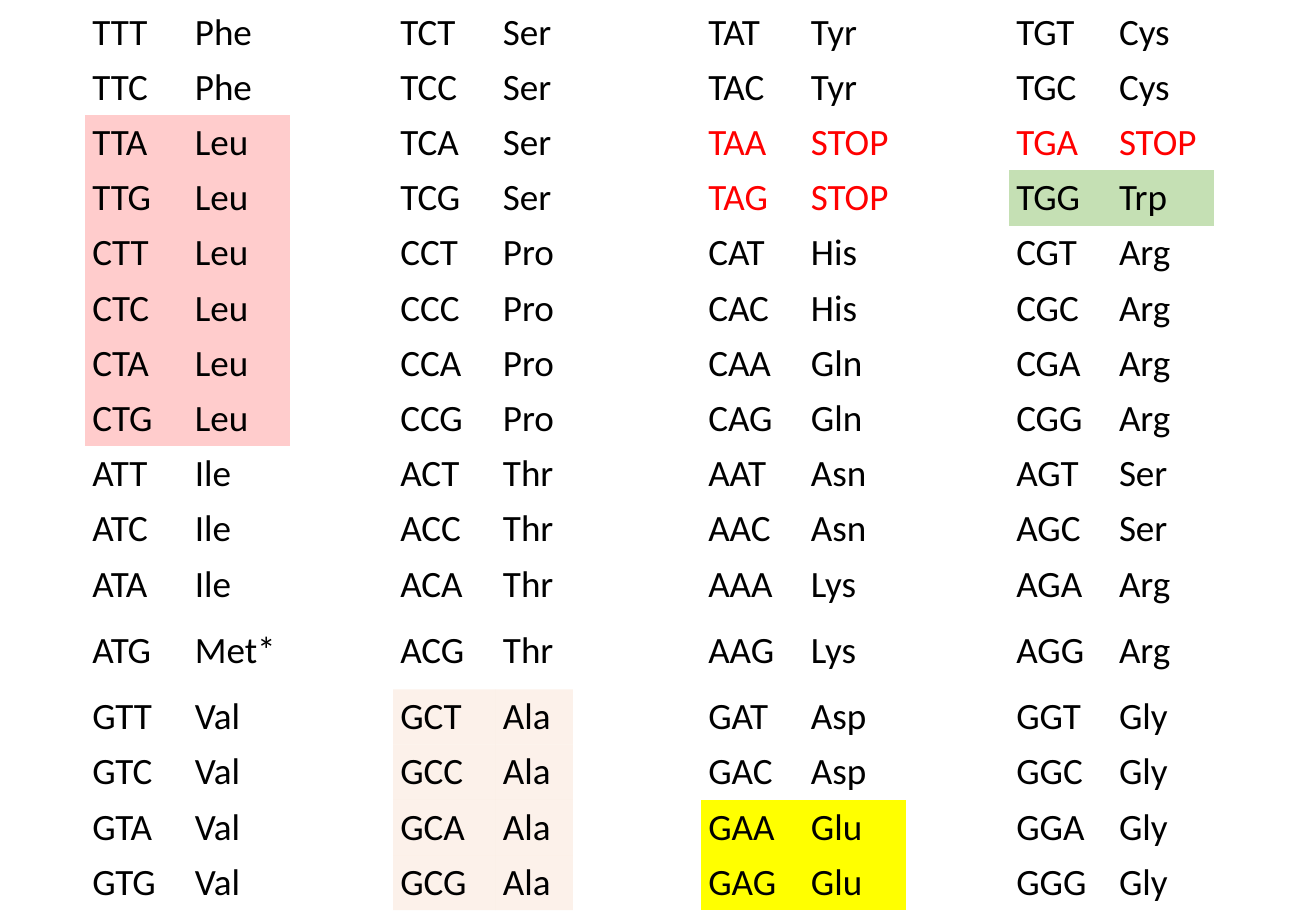
from dataclasses import dataclass
from itertools import product

from pptx import Presentation
from pptx.dml.color import RGBColor
from pptx.enum.text import MSO_ANCHOR
from pptx.oxml.ns import qn
from pptx.util import Pt

BASES = "TCAG"
AMINO_ACIDS = {
    "T": "Phe Phe Leu Leu Leu Leu Leu Leu Ile Ile Ile Met* Val Val Val Val",
    "C": "Ser Ser Ser Ser Pro Pro Pro Pro Thr Thr Thr Thr Ala Ala Ala Ala",
    "A": "Tyr Tyr STOP STOP His His Gln Gln Asn Asn Lys Lys Asp Asp Glu Glu",
    "G": "Cys Cys STOP Trp Arg Arg Arg Arg Ser Ser Arg Arg Gly Gly Gly Gly",
}
HIGHLIGHTS = {
    "Leu": ("FFCCCC", 100),
    "Trp": ("C5E0B4", 100),
    "Ala": ("FBE5D6", 50),
    "Glu": ("FFFF00", 100),
}


@dataclass
class Theme:
    font: str = "Calibri"
    size: float = 22
    text: str = "000000"
    stop: str = "FF0000"
    plain_style: str = "{2D5ABB26-0587-4C30-8999-92F81FD0307C}"


THEME = Theme()
SLIDE_WIDTH, SLIDE_HEIGHT = 780, 540
TABLE_LEFT, TABLE_TOP = 50.4, 2.9
COLUMN_WIDTH, ALANINE_WIDTH = 60.87, 45.8
ROW_HEIGHT, START_ROW_HEIGHT = 32.74, 46
MARGIN_X, MARGIN_Y = 4.3, 2.8

codon_ends = list(product(BASES, BASES))
column_widths = [COLUMN_WIDTH] * (3 * len(BASES) - 1)
column_widths[4] = ALANINE_WIDTH
column_widths[5] = 2 * COLUMN_WIDTH - ALANINE_WIDTH
row_heights = [
    START_ROW_HEIGHT if name == "Met*" else ROW_HEIGHT
    for name in AMINO_ACIDS["T"].split()
]


def write_cell(cell, text, amino_acid):
    cell.text = text
    font = cell.text_frame.paragraphs[0].font
    font.name = THEME.font
    font.size = Pt(THEME.size)
    color = THEME.stop if amino_acid == "STOP" else THEME.text
    font.color.rgb = RGBColor.from_string(color)
    if amino_acid in HIGHLIGHTS:
        fill_color, opacity = HIGHLIGHTS[amino_acid]
        cell.fill.solid()
        cell.fill.fore_color.rgb = RGBColor.from_string(fill_color)
        if opacity < 100:
            color_element = cell._tc.tcPr.find(".//" + qn("a:srgbClr"))
            alpha = color_element.makeelement(qn("a:alpha"), {"val": str(opacity * 1000)})
            color_element.append(alpha)


def add_codon_table(slide):
    frame = slide.shapes.add_table(
        len(row_heights), len(column_widths), Pt(TABLE_LEFT), Pt(TABLE_TOP),
        Pt(sum(column_widths)), Pt(sum(row_heights)),
    )
    table = frame.table
    table.first_row = False
    table.horz_banding = False
    table._tbl.tblPr.find(qn("a:tableStyleId")).text = THEME.plain_style
    for column, width in zip(table.columns, column_widths):
        column.width = Pt(width)
    for row, height in zip(table.rows, row_heights):
        row.height = Pt(height)
    for cell in table.iter_cells():
        cell.fill.background()
        cell.vertical_anchor = MSO_ANCHOR.MIDDLE
        cell.margin_left = cell.margin_right = Pt(MARGIN_X)
        cell.margin_top = cell.margin_bottom = Pt(MARGIN_Y)
    for group, (second, names) in enumerate(AMINO_ACIDS.items()):
        for row, ((first, third), name) in enumerate(zip(codon_ends, names.split())):
            write_cell(table.cell(row, 3 * group), first + second + third, name)
            write_cell(table.cell(row, 3 * group + 1), name, name)


def main():
    presentation = Presentation()
    presentation.slide_width = Pt(SLIDE_WIDTH)
    presentation.slide_height = Pt(SLIDE_HEIGHT)
    slide = presentation.slides.add_slide(presentation.slide_layouts[6])
    add_codon_table(slide)
    presentation.save("out.pptx")


if __name__ == "__main__":
    main()
